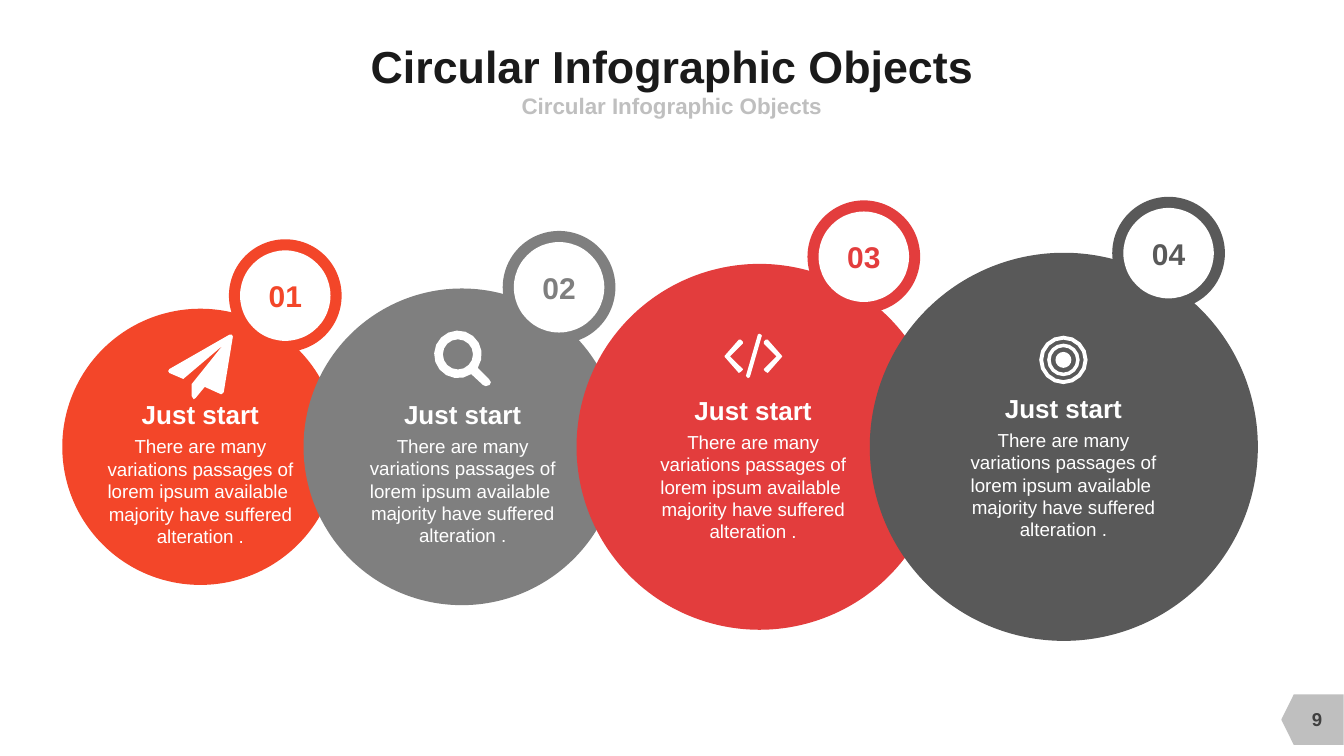
import math

from pptx import Presentation
from pptx.dml.color import RGBColor
from pptx.enum import shapes, text
from pptx.util import Cm, Pt

ORANGE = RGBColor(0xF3, 0x46, 0x29)
GRAY = RGBColor(0x7F, 0x7F, 0x7F)
RED = RGBColor(0xE3, 0x3D, 0x3D)
CHARCOAL = RGBColor(0x59, 0x59, 0x59)
WHITE = RGBColor(0xFF, 0xFF, 0xFF)
SILVER = RGBColor(0xBF, 0xBF, 0xBF)
TITLE_INK = RGBColor(0x1A, 0x1A, 0x1A)
PAGE_INK = RGBColor(0x40, 0x40, 0x40)

MIDDLE_Y = 11.26
BADGE_SIZE, BADGE_HOLE = 2.84, 2.28
ARC_STEPS = 16
BODY = ("There are many variations passages of lorem ipsum available  "
        "majority have suffered alteration .")


def write(shape, words, size, color, bold=True, wrap=True,
          anchor=text.MSO_ANCHOR.MIDDLE):
    """Fill a shape with one centred paragraph, without margins."""
    frame = shape.text_frame
    frame.text = words
    frame_format = {"margin_left": 0, "margin_right": 0, "margin_top": 0,
                    "margin_bottom": 0, "word_wrap": wrap,
                    "auto_size": text.MSO_AUTO_SIZE.NONE,
                    "vertical_anchor": anchor}
    for name, value in frame_format.items():
        setattr(frame, name, value)
    paragraph = frame.paragraphs[0]
    paragraph.alignment = text.PP_ALIGN.CENTER
    paragraph.space_before = Pt(0)
    font = paragraph.runs[0].font
    for name, value in {"name": "Arial", "size": Pt(size), "bold": bold}.items():
        setattr(font, name, value)
    font.color.rgb = color
    return paragraph


def arc(x, y, radius, start=0, end=360):
    """Points along a circle, angles in degrees clockwise, end left out."""
    angles = [math.radians(start + (end - start) * i / ARC_STEPS)
              for i in range(ARC_STEPS)]
    return [(x + radius * math.cos(a), y + radius * math.sin(a)) for a in angles]


presentation = Presentation()
presentation.slide_width, presentation.slide_height = Cm(33.87), Cm(19.05)
slide = presentation.slides.add_slide(presentation.slide_layouts[1])

# Title and subtitle
title, subtitle = slide.placeholders
for holder, box in ((title, (6.5, 0.99, 20.88, 1.32)),
                    (subtitle, (9.31, 2.29, 15.24, 0.74))):
    holder.left, holder.top, holder.width, holder.height = map(Cm, box)
write(title, "Circular Infographic Objects", 32, TITLE_INK, wrap=False)
paragraph = write(subtitle, "Circular Infographic Objects", 16, SILVER)
properties = paragraph._p.get_or_add_pPr()
properties.set("marL", "0")
properties.set("indent", "0")
properties.append(properties.makeelement(
    "{http://schemas.openxmlformats.org/drawingml/2006/main}buNone", {}))

# Page number
page_tag = slide.shapes.add_shape(shapes.MSO_SHAPE.FLOWCHART_OFFPAGE_CONNECTOR,
                                  Cm(32.44), Cm(17.35), Cm(1.27), Cm(1.57))
page_tag.rotation = 90
page_number = slide.shapes.add_textbox(Cm(32.34), Cm(17.6), Cm(1.7), Cm(1.02))
write(page_number, "9", 13.3, PAGE_INK)
filled_shapes = [(page_tag, SILVER)]

# Circles: colour, left, diameter, text left, text top
circles = [
    (ORANGE, 1.57, 6.96, 2.61, 10.97),
    (GRAY, 7.65, 7.98, 9.22, 10.95),
    (RED, 14.53, 9.22, 16.54, 10.85),
    (CHARCOAL, 21.92, 9.78, 24.36, 10.8),
]
for color, left, size, text_left, text_top in circles:
    circle = slide.shapes.add_shape(shapes.MSO_SHAPE.OVAL, Cm(left),
                                    Cm(MIDDLE_Y - size / 2), Cm(size), Cm(size))
    filled_shapes.append((circle, color))
    caption = slide.shapes.add_group_shape().shapes
    body = caption.add_textbox(Cm(text_left), Cm(text_top), Cm(4.88), Cm(2.84))
    write(body, BODY, 13.33, WHITE, bold=False, anchor=text.MSO_ANCHOR.TOP)
    heading = caption.add_textbox(Cm(text_left + 0.94), Cm(text_top - 0.92),
                                  Cm(3), Cm(0.79))
    write(heading, "Just start", 18.6, WHITE, wrap=False, anchor=text.MSO_ANCHOR.TOP)

# Icons, each a list of outlines
plane = [[(5.87, 8.48), (5.64, 9.88), (5.59, 9.93), (5.56, 9.93), (5.16, 9.75),
          (4.93, 10.03), (4.88, 10.06), (4.83, 9.98), (4.83, 9.68), (5.61, 8.71),
          (4.62, 9.55), (4.27, 9.4), (4.24, 9.35), (4.27, 9.3), (5.79, 8.43),
          (5.84, 8.43)]]
handle = [(12.04, 9.27), (12.32, 9.55), (12.37, 9.63), (12.34, 9.7), (12.24, 9.73),
          (12.17, 9.7)]
magnifier = [arc(11.54, 8.93, 0.6, 56, 394) + handle, arc(11.54, 8.93, 0.38)]
chevron = [(18.67, 9.37), (18.62, 9.4), (18.26, 8.99), (18.26, 8.97), (18.62, 8.56),
           (18.67, 8.56), (18.72, 8.61), (18.72, 8.66), (18.4, 8.98), (18.72, 9.3),
           (18.72, 9.32)]
slash = [(18.9, 9.5), (18.85, 9.53), (18.82, 9.5), (18.8, 9.47), (19.1, 8.43),
         (19.13, 8.41), (19.18, 8.43), (19.2, 8.46)]
code = [chevron, slash, [(37.97 - x, y) for x, y in chevron]]
target = [arc(26.8, 9.07, radius) for radius in (0.61, 0.51, 0.41, 0.32, 0.2)]
for outlines in (plane, code, magnifier, target):
    builder = None
    for outline in outlines:
        start, *rest = [(Cm(x), Cm(y)) for x, y in outline]
        if builder is None:
            builder = slide.shapes.build_freeform(*start)
        else:
            builder.move_to(*start)
        builder.add_line_segments(rest, close=True)
    filled_shapes.append((builder.convert_to_shape(), WHITE))

# Numbered badges
badges = [(5.77, 6.03), (12.67, 5.82), (20.35, 5.05), (28.03, 4.96)]
inset = (BADGE_SIZE - BADGE_HOLE) / 2
for number, (left, top) in enumerate(badges, start=1):
    color = circles[number - 1][0]
    badge = slide.shapes.add_group_shape().shapes
    ring = badge.add_shape(shapes.MSO_SHAPE.OVAL, Cm(left), Cm(top),
                           Cm(BADGE_SIZE), Cm(BADGE_SIZE))
    hole = badge.add_shape(shapes.MSO_SHAPE.OVAL, Cm(left + inset), Cm(top + inset),
                           Cm(BADGE_HOLE), Cm(BADGE_HOLE))
    write(hole, f"{number:02}", 21.4, color)
    filled_shapes += [(ring, color), (hole, WHITE)]

for shape, color in filled_shapes:
    shape.shadow.inherit = False
    shape.fill.solid()
    shape.fill.fore_color.rgb = color
    shape.line.fill.background()

presentation.save("out.pptx")
